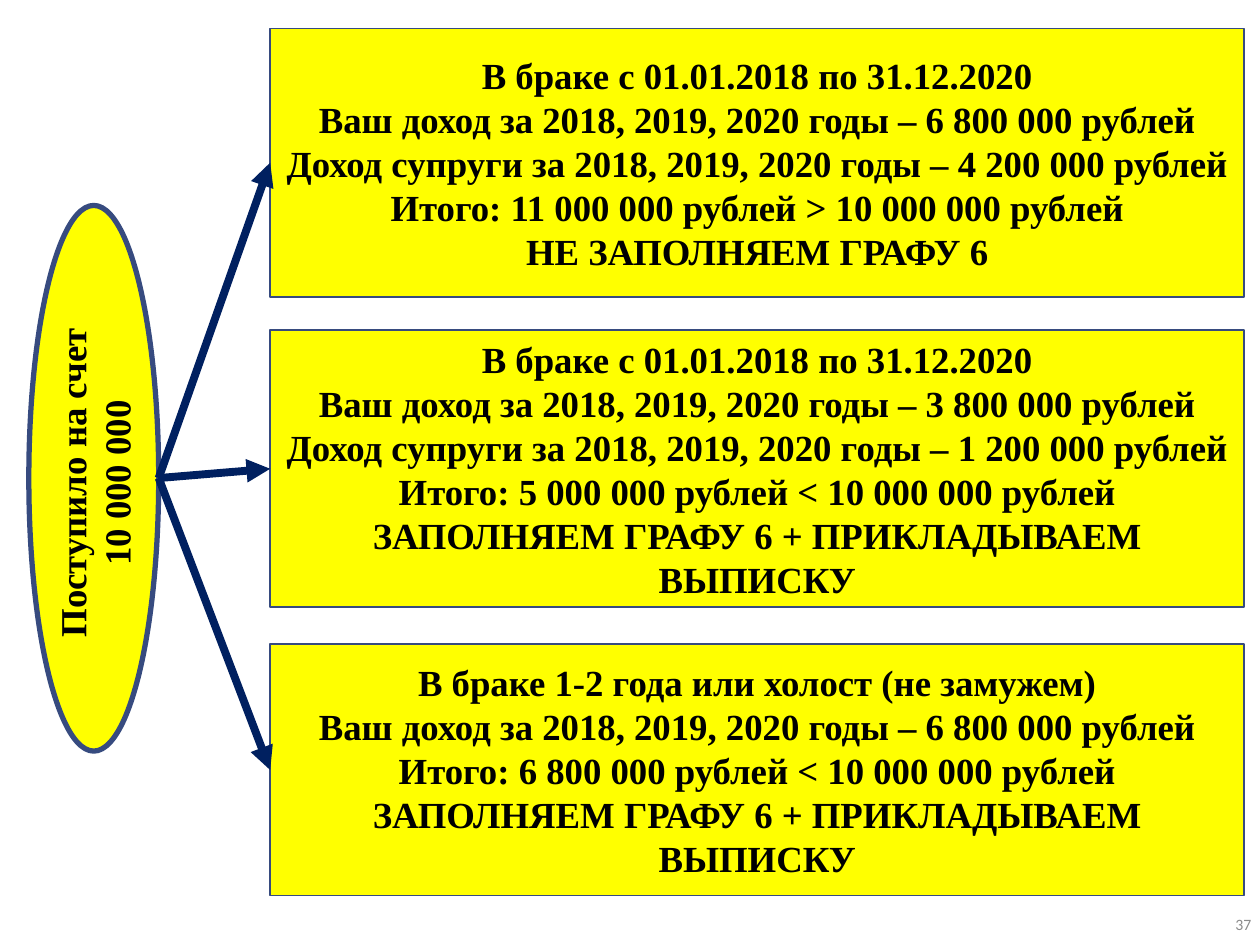
from lxml import etree
from pptx import Presentation
from pptx import util as u
from pptx.dml.color import RGBColor
from pptx.enum import shapes, text
from pptx.oxml import ns

Pt = u.Pt
YELLOW, OUTLINE, NAVY = "FFFF00", "374B7F", "002060"


def paint(color_format, hex_color):
    color_format.rgb = RGBColor.from_string(hex_color)


def write(shape, lines, size=21, font="Times New Roman", color="000000",
          bold=True, align=text.PP_ALIGN.CENTER):
    """Fill a shape with one formatted paragraph per line."""
    frame = shape.text_frame
    frame.word_wrap = True
    frame.vertical_anchor = text.MSO_ANCHOR.MIDDLE
    frame.text = "\n".join(lines)
    for paragraph in frame.paragraphs:
        paragraph.alignment = align
        run_font = paragraph.runs[0].font
        run_font.size, run_font.name, run_font.bold = Pt(size), font, bold
        paint(run_font.color, color)


prs = Presentation()
prs.slide_width, prs.slide_height = Pt(720), Pt(540)
slide = prs.slides.add_slide(prs.slide_layouts[6])

page_number = slide.shapes.add_textbox(Pt(687.6), Pt(514), Pt(32.4), Pt(28.8))
margins = page_number.text_frame
margins.margin_left = margins.margin_right = Pt(5)
margins.margin_top = margins.margin_bottom = Pt(3)
write(page_number, ["37"], size=9, font="Calibri", color="8C8C8C", bold=False,
      align=text.PP_ALIGN.RIGHT)

deposit = slide.shapes.add_shape(
    shapes.MSO_SHAPE.OVAL, Pt(-102.3), Pt(236.2), Pt(311.8), Pt(74.2))
deposit.rotation = 270
deposit.line.width = Pt(3)
write(deposit, ["Поступило на счет ", "10 000 000 "])

married = "В браке с 01.01.2018 по 31.12.2020"
fill_column = "ЗАПОЛНЯЕМ ГРАФУ 6 + ПРИКЛАДЫВАЕМ ВЫПИСКУ"
cases = [
    (16.3, 153.4, [
        married,
        "Ваш доход за 2018, 2019, 2020 годы – 6 800 000 рублей",
        "Доход супруги за 2018, 2019, 2020 годы – 4 200 000 рублей",
        "Итого: 11 000 000 рублей > 10 000 000 рублей",
        "НЕ ЗАПОЛНЯЕМ ГРАФУ 6"]),
    (188.7, 158.4, [
        married,
        "Ваш доход за 2018, 2019, 2020 годы – 3 800 000 рублей",
        "Доход супруги за 2018, 2019, 2020 годы – 1 200 000 рублей",
        "Итого: 5 000 000 рублей < 10 000 000 рублей",
        fill_column]),
    (368.2, 143.6, [
        "В браке 1-2 года или холост (не замужем)",
        "Ваш доход за 2018, 2019, 2020 годы – 6 800 000 рублей",
        "Итого: 6 800 000 рублей < 10 000 000 рублей",
        fill_column]),
]
case_left = 154.4
case_boxes = []
for top, height, lines in cases:
    case = slide.shapes.add_shape(
        shapes.MSO_SHAPE.RECTANGLE, Pt(case_left), Pt(top), Pt(556.6), Pt(height))
    case.line.width = Pt(1)
    write(case, lines)
    case_boxes.append(case)

for filled in [deposit, *case_boxes]:
    filled.shadow.inherit = False
    filled.fill.solid()
    paint(filled.fill.fore_color, YELLOW)
    paint(filled.line.color, OUTLINE)

for top, height, lines in cases:
    arrow = slide.shapes.add_connector(
        shapes.MSO_CONNECTOR.STRAIGHT, Pt(90.7), Pt(273.2),
        Pt(case_left), Pt(top + height / 2))
    arrow.line.width = Pt(4.5)
    paint(arrow.line.color, NAVY)
    properties = arrow.element.spPr
    etree.SubElement(properties.find(ns.qn("a:ln")), ns.qn("a:tailEnd"), type="triangle")
    etree.SubElement(properties, ns.qn("a:effectLst"))

prs.save("out.pptx")
